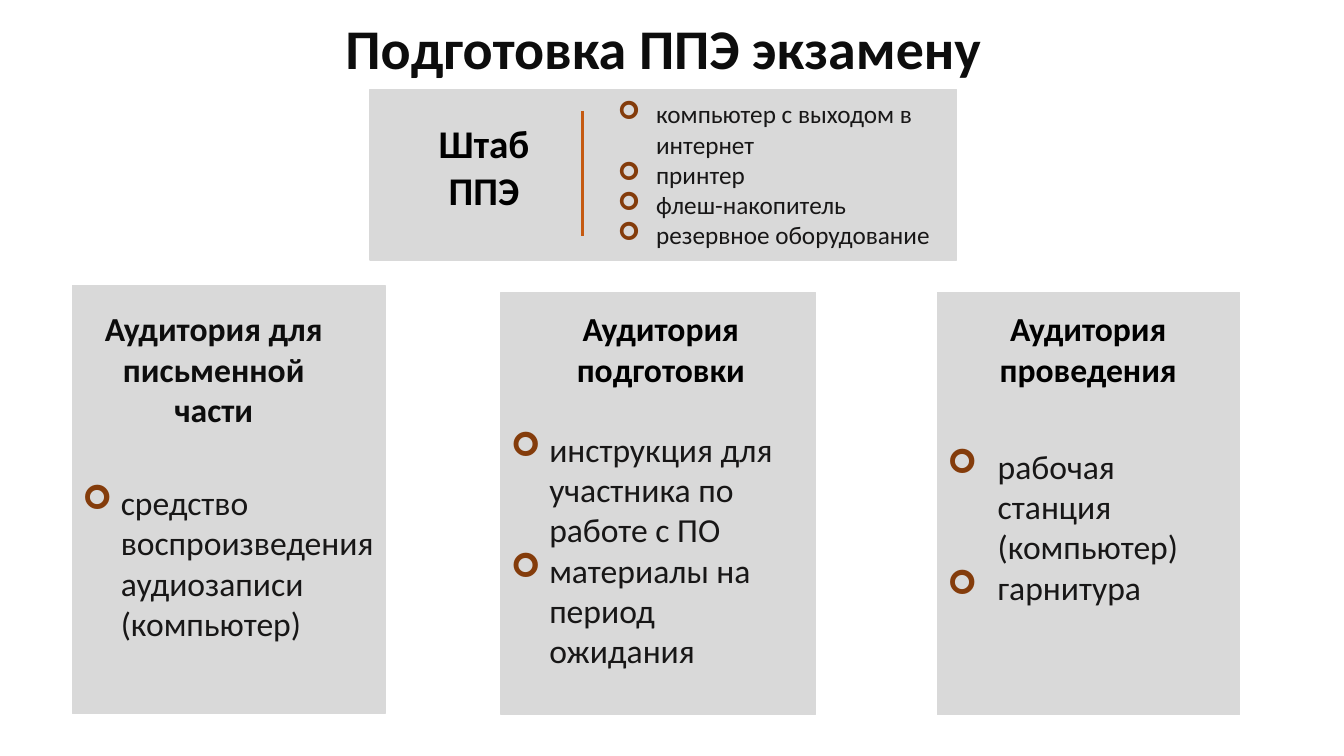
from lxml.etree import SubElement
from pptx import Presentation
from pptx.dml.color import RGBColor
from pptx.enum.shapes import MSO_CONNECTOR as Connector, MSO_SHAPE as Shape
from pptx.enum.text import MSO_ANCHOR as Anchor, MSO_AUTO_SIZE as AutoSize, PP_ALIGN as Align
from pptx.oxml.ns import qn
from pptx.util import Inches, Pt

WIDTH, HEIGHT = Inches(13.33), Inches(7.5)
GREY, RUST, BROWN = "D9D9D9", "C55A11", "843C0B"
BLACK, INK, TEXT = "000000", "0D0D0D", "181717"

HEADING_TOP = 40.13
ROOMS = [
    dict(card=(5.4, 37.73, 23.25, 56.67), heading=(6.23, 19.35, 17.47), color=INK,
         name="Аудитория для письменной части", drop=26, indent=0.38,
         items=["средство воспроизведения аудиозаписи (компьютер)"]),
    dict(card=(37.28, 38.67, 23.4, 55.87), heading=(39.38, 19.58, 12.13), color=BLACK,
         name="Аудитория подготовки", drop=18, indent=0.38,
         items=["инструкция для участника по работе с ПО", "материалы на период ожидания"]),
    dict(card=(69.75, 38.67, 22.5, 55.87), heading=(71.18, 19.58, 12.13), color=BLACK,
         name="Аудитория проведения", drop=20.27, indent=0.5,
         items=["рабочая станция (компьютер)", "гарнитура"]),
]
EQUIPMENT = ["компьютер с выходом в интернет", "принтер",
             "флеш-накопитель", "резервное оборудование"]


def paint(color_format, value):
    """Apply a hex colour to a fill or a font colour."""
    color_format.rgb = RGBColor.from_string(value)


def across(share):
    """Turn a percentage of the slide width into a length."""
    return int(WIDTH * share / 100)


def down(share):
    """Turn a percentage of the slide height into a length."""
    return int(HEIGHT * share / 100)


def area(left, top, width, height):
    """Turn percentages of the slide into a position and size."""
    return across(left), down(top), across(width), down(height)


def add_bullet(para, indent):
    """Give a paragraph a brown arrow bullet with a hanging indent."""
    properties = para._p.get_or_add_pPr()
    properties.set("marL", str(Inches(indent)))
    properties.set("indent", str(-Inches(indent)))
    color = SubElement(properties, qn("a:buClr"))
    SubElement(color, qn("a:srgbClr"), val=BROWN)
    SubElement(properties, qn("a:buFont"), typeface="Wingdings")
    SubElement(properties, qn("a:buChar"), char="➢")


def write(shape, lines, size=24, color=TEXT, bold=False, align=Align.LEFT, indent=0, drop=None):
    """Write formatted paragraphs into a shape, bulleted when indented."""
    frame = shape.text_frame
    frame.word_wrap = True
    frame.auto_size = AutoSize.NONE
    frame.vertical_anchor = Anchor.TOP
    if drop is not None:
        frame.margin_top = down(drop)
    for number, line in enumerate(lines):
        para = frame.add_paragraph() if number else frame.paragraphs[0]
        para.alignment = align
        span = para.add_run()
        span.text = line
        span.font.name = "Calibri"
        span.font.size = Pt(size)
        span.font.bold = bold
        paint(span.font.color, color)
        if indent:
            add_bullet(para, indent)


def add_panel(page, place):
    """Add a grey rectangle."""
    panel = page.shapes.add_shape(Shape.RECTANGLE, *area(*place))
    panel.shadow.inherit = False
    panel.fill.solid()
    paint(panel.fill.fore_color, GREY)
    paint(panel.line.color, GREY)
    panel.line.width = Pt(1)
    return panel


def add_label(page, place, lines, **style):
    """Add a text box."""
    write(page.shapes.add_textbox(*area(*place)), lines, **style)


def add_divider(page, left, top, bottom):
    """Add a vertical rust line."""
    divider = page.shapes.add_connector(
        Connector.STRAIGHT, across(left), down(top), across(left), down(bottom))
    paint(divider.line.color, RUST)
    divider.line.width = Pt(2.25)
    SubElement(divider._element.spPr, qn("a:effectLst"))


def add_title(page, place, text):
    """Place and format the title placeholder."""
    title = page.shapes.title
    title.left, title.top, title.width, title.height = area(*place)
    write(title, [text], size=40, color=INK, bold=True, align=Align.CENTER)


def add_staff_room(page):
    """Add the staff room panel with its equipment list."""
    add_panel(page, (27.53, 11.87, 43.65, 22.53))
    add_divider(page, 43.35, 14.67, 31.2)
    add_label(page, (30.23, 15.07, 11.55, 13.87), ["Штаб ППЭ"],
              size=28, color=BLACK, bold=True, align=Align.CENTER)
    add_label(page, (45.23, 12.4, 27.6, 21.6), EQUIPMENT, size=18, indent=0.38)


def add_room(page, card, heading, color, name, drop, indent, items):
    """Add a room card with its heading and bulleted items."""
    write(add_panel(page, card), items, indent=indent, drop=drop)
    left, width, height = heading
    add_label(page, (left, HEADING_TOP, width, height), [name],
              color=color, bold=True, align=Align.CENTER)


def main():
    """Build and save the slide."""
    deck = Presentation()
    deck.slide_width, deck.slide_height = WIDTH, HEIGHT
    page = deck.slides.add_slide(deck.slide_layouts.get_by_name("Title Only"))
    add_title(page, (3.38, 1.07, 91.95, 10.27), "Подготовка ППЭ экзамену")
    add_staff_room(page)
    for room in ROOMS:
        add_room(page, **room)
    deck.save("out.pptx")


if __name__ == "__main__":
    main()
